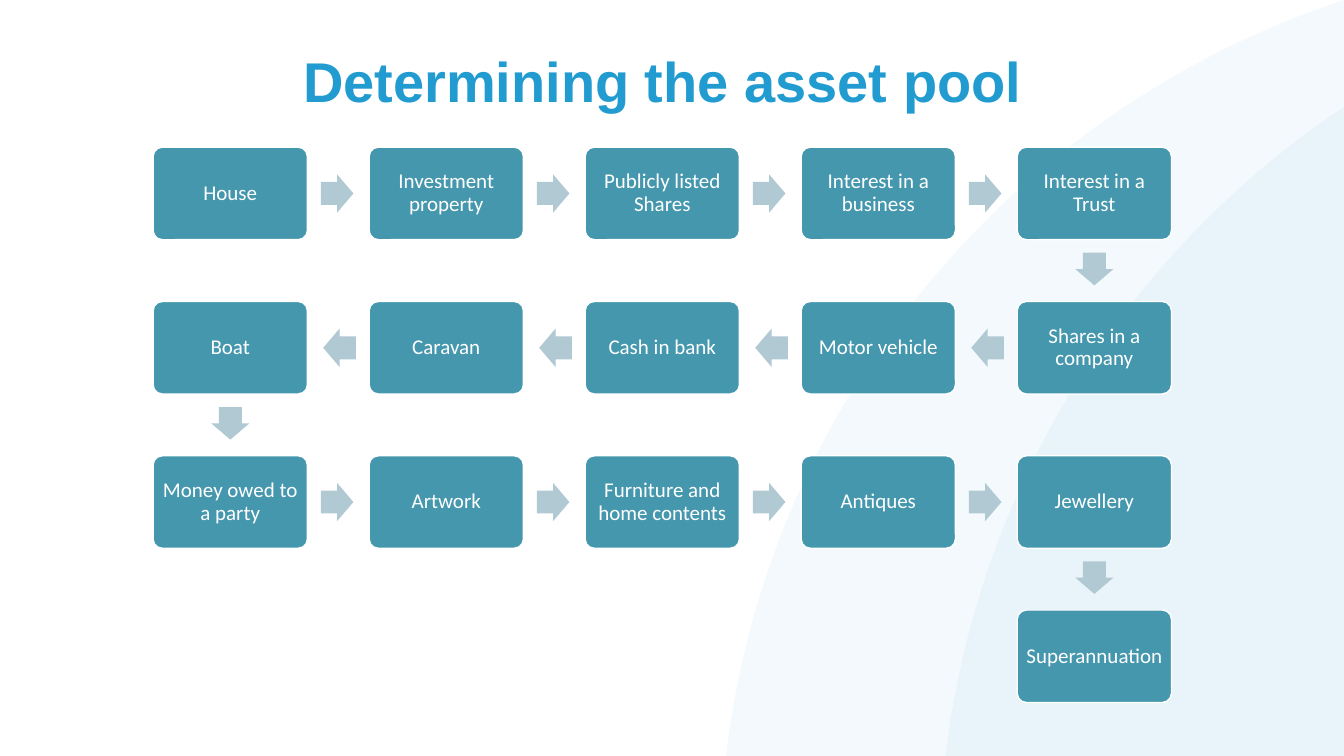
"""Build a slide with a snaking chain of asset boxes."""
from lxml import etree
from pptx import Presentation
from pptx.dml.color import RGBColor
from pptx.enum import shapes, text
from pptx.oxml import ns
from pptx.util import Pt

HUES = {"sky": "229CD0", "teal": "4597AD", "mist": "B1C9D3", "white": "FFFFFF"}
ROWS = [
    ["House", "Investment property", "Publicly listed Shares",
     "Interest in a business", "Interest in a Trust"],
    ["Shares in a company", "Motor vehicle", "Cash in bank", "Caravan", "Boat"],
    ["Money owed to a party", "Artwork", "Furniture and home contents",
     "Antiques", "Jewellery"],
    ["Superannuation"],
]
KIND = shapes.MSO_SHAPE
LEFT, TOP = 164.5, 138.2
STEP_X, STEP_Y = 154.3, 110.2
BOX_W, BOX_H = 110.2, 66.1
ARROW_W, ARROW_H = 23.3, 27.3
GAP_X, GAP_Y = 76.3, 54


def color(name):
    return RGBColor.from_string(HUES[name])


def add_shape(slide, kind, mid_x, mid_y, wide, high, hue):
    shape = slide.shapes.add_shape(
        kind, Pt(mid_x - wide / 2), Pt(mid_y - high / 2), Pt(wide), Pt(high))
    shape.shadow.inherit = False
    shape.fill.solid()
    shape.fill.fore_color.rgb = color(hue)
    shape.line.fill.background()
    return shape


def add_disc(slide, left):
    size = 1297.4
    disc = add_shape(slide, KIND.OVAL, left + size / 2, size / 2 - 32.4,
                     size, size, "sky")
    tint = disc.fill._xPr.find(".//" + ns.qn("a:srgbClr"))
    etree.SubElement(tint, ns.qn("a:alpha"), val="5000")


def set_text(frame, words, size, font, hue, bold=False):
    frame.word_wrap = True
    para = frame.paragraphs[0]
    para.text = words
    para.alignment = text.PP_ALIGN.CENTER
    para.line_spacing = 0.9
    para.font.size = Pt(size)
    para.font.name = font
    para.font.bold = bold
    para.font.color.rgb = color(hue)


def add_title(slide, words):
    box = slide.shapes.add_textbox(Pt(67.7), Pt(35.3), Pt(810.7), Pt(69.8))
    set_text(box.text_frame, words, 40, "Arial", "sky", True)


def add_box(slide, words, mid_x, mid_y):
    box = add_shape(slide, KIND.ROUNDED_RECTANGLE, mid_x, mid_y,
                    BOX_W, BOX_H, "teal")
    box.adjustments[0] = 0.1
    box.line.color.rgb = color("white")
    box.line.width = Pt(1)
    frame = box.text_frame
    frame.margin_left = frame.margin_right = Pt(4)
    frame.margin_top = frame.margin_bottom = Pt(4)
    frame.vertical_anchor = text.MSO_ANCHOR.MIDDLE
    set_text(frame, words, 15, "Calibri", "white")


def add_arrow(slide, mid_x, mid_y, turn):
    arrow = add_shape(slide, KIND.RIGHT_ARROW, mid_x, mid_y,
                      ARROW_W, ARROW_H, "mist")
    arrow.adjustments[0] = 0.6
    arrow.adjustments[1] = 0.5
    arrow.rotation = turn


def add_chain(slide, rows):
    for row, names in enumerate(rows):
        back = row % 2 == 1
        way = -1 if back else 1
        mid_y = TOP + row * STEP_Y
        for spot, name in enumerate(names):
            col = 4 - spot if back else spot
            mid_x = LEFT + col * STEP_X
            add_box(slide, name, mid_x, mid_y)
            if spot < len(names) - 1:
                add_arrow(slide, mid_x + way * GAP_X, mid_y, 180 if back else 0)
            elif row < len(rows) - 1:
                add_arrow(slide, mid_x, mid_y + GAP_Y, 90)


def main():
    deck = Presentation()
    deck.slide_width, deck.slide_height = Pt(960), Pt(540)
    slide = deck.slides.add_slide(deck.slide_layouts[6])
    for left in (514.1, 671):
        add_disc(slide, left)
    add_title(slide, "Determining the asset pool")
    add_chain(slide, ROWS)
    deck.save("out.pptx")


if __name__ == "__main__":
    main()
